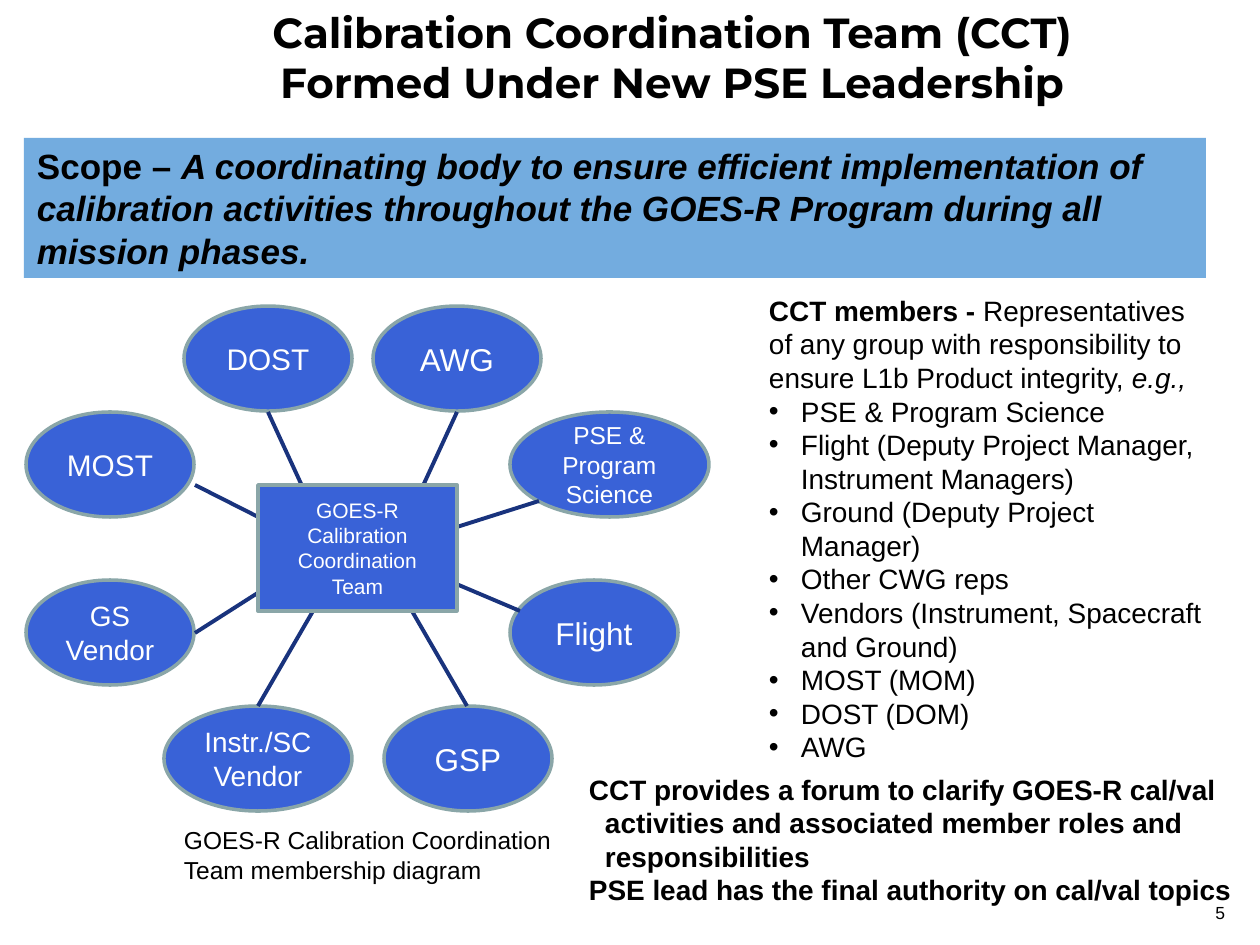
from dataclasses import dataclass

from lxml import etree
from pptx import Presentation
from pptx.dml.color import RGBColor
from pptx.enum.shapes import MSO_CONNECTOR as Connector, MSO_SHAPE as Shape
from pptx.enum.text import MSO_ANCHOR as Anchor, MSO_AUTO_SIZE as AutoSize, PP_ALIGN as Align
from pptx.oxml.ns import qn
from pptx.util import Emu, Pt

EMU_PER_PX = 914400 / 126


@dataclass(frozen=True)
class Theme:
    heading_font: str = "Montserrat"
    body_font: str = "Arial"
    ink: str = "000000"
    light: str = "FFFFFF"
    node: str = "3962D7"
    node_border: str = "8AA6A8"
    link: str = "19337D"
    band: str = "73ACDF"
    title: int = 24
    scope: int = 20
    large: int = 18
    medium: int = 17
    body: int = 16
    small: int = 14
    hub: int = 12
    page: int = 10


THEME = Theme()

# label, left, top, width, type size, link start, link end; relative to the diagram
NODE_HEIGHT = 105
MEMBERS = [
    ("AWG", 347, 0, 168, THEME.large, (431, 106), (378, 221)),
    ("PSE & Program Science", 484, 106, 199, THEME.small, (431, 221), (513, 195)),
    ("Flight", 484, 274, 168, THEME.large, (421, 274), (494, 305)),
    ("GSP", 358, 400, 168, THEME.large, (368, 274), (441, 400)),
    ("Instr./SC Vendor", 138, 400, 188, THEME.body, (305, 274), (232, 400)),
    ("GS Vendor", 0, 274, 168, THEME.body, (169, 327), (252, 274)),
    ("MOST", 0, 106, 168, THEME.medium, (169, 179), (252, 221)),
    ("DOST", 158, 0, 168, THEME.medium, (242, 106), (295, 221)),
]
REPRESENTATIVES = [
    "PSE & Program Science",
    "Flight (Deputy Project Manager, Instrument Managers)",
    "Ground (Deputy Project Manager)",
    "Other CWG reps",
    "Vendors (Instrument, Spacecraft and Ground)",
    "MOST (MOM)",
    "DOST (DOM)",
    "AWG",
]


def px(*lengths):
    return [Emu(round(length * EMU_PER_PX)) for length in lengths]


def place(shape, box):
    shape.left, shape.top, shape.width, shape.height = px(*box)


def set_up_frame(shape, anchor=Anchor.TOP, side=13):
    frame = shape.text_frame
    frame.word_wrap = True
    frame.auto_size = AutoSize.NONE
    frame.vertical_anchor = anchor
    frame.margin_left, frame.margin_right = px(side, side)
    return frame


def add_run(paragraph, text, size, color=THEME.ink, font=THEME.body_font, bold=False, italic=False):
    run = paragraph.add_run()
    run.text = text
    run.font.name, run.font.size = font, Pt(size)
    run.font.bold, run.font.italic = bold, italic
    run.font.color.rgb = RGBColor.from_string(color)


def set_indent(paragraph, hanging, bullet=None):
    """Hang the first line by some px, with the bullet or none at all."""
    properties = paragraph._p.get_or_add_pPr()
    distance = px(hanging)[0]
    properties.set("marL", str(distance))
    properties.set("indent", str(-distance))
    if bullet:
        etree.SubElement(properties, qn("a:buFont")).set("typeface", THEME.body_font)
        etree.SubElement(properties, qn("a:buChar")).set("char", bullet)
    else:
        etree.SubElement(properties, qn("a:buNone"))
    paragraph.space_before = Pt(0)


def add_box(shapes, preset, box, fill, border=None):
    shape = shapes.add_shape(preset, *px(*box))
    shape.shadow.inherit = False
    shape.fill.solid()
    shape.fill.fore_color.rgb = RGBColor.from_string(fill)
    if border:
        shape.line.color.rgb = RGBColor.from_string(border)
        shape.line.width = Pt(2)
    else:
        shape.line.fill.background()
    return shape


def add_node(shapes, preset, box, label, size, side):
    shape = add_box(shapes, preset, box, THEME.node, THEME.node_border)
    paragraph = set_up_frame(shape, Anchor.MIDDLE, side).paragraphs[0]
    paragraph.alignment = Align.CENTER
    add_run(paragraph, label, size, THEME.light)


def add_link(shapes, start, end):
    link = shapes.add_connector(Connector.STRAIGHT, *px(*start, *end))
    link.line.color.rgb = RGBColor.from_string(THEME.link)
    link.line.width = Pt(2.25)
    etree.SubElement(link._element.spPr, qn("a:effectLst"))


def add_text(slide, box, text, size, align=Align.LEFT):
    paragraph = set_up_frame(slide.shapes.add_textbox(*px(*box))).paragraphs[0]
    paragraph.alignment = align
    add_run(paragraph, text, size)


def fill_title(slide, box):
    title = slide.shapes.title
    place(title, box)
    paragraph = set_up_frame(title).paragraphs[0]
    paragraph.alignment = Align.CENTER
    add_run(paragraph, "Calibration Coordination Team (CCT) Formed Under New PSE Leadership",
            THEME.title, font=THEME.heading_font, bold=True)


def add_scope(slide, box):
    band = add_box(slide.shapes, Shape.RECTANGLE, box, THEME.band)
    paragraph = set_up_frame(band, Anchor.MIDDLE).paragraphs[0]
    paragraph.alignment = Align.LEFT
    add_run(paragraph, "Scope – ", THEME.scope, bold=True)
    add_run(paragraph, "A coordinating body to ensure efficient implementation of calibration "
            "activities throughout the GOES-R Program during all mission phases.",
            THEME.scope, bold=True, italic=True)


def add_diagram(slide, left, top):
    """Ring of member ellipses linked to the team in the middle."""
    shapes = slide.shapes.add_group_shape().shapes

    def shift(x, y):
        return left + x, top + y

    for label, x, y, width, size, _, _ in MEMBERS:
        add_node(shapes, Shape.OVAL, (*shift(x, y), width, NODE_HEIGHT), label, size, side=6)
    for *_, start, end in MEMBERS:
        add_link(shapes, shift(*start), shift(*end))
    add_node(shapes, Shape.RECTANGLE, (*shift(232, 179), 199, 126),
             "GOES-R Calibration Coordination Team", THEME.hub, side=18)


def fill_members(slide, box):
    body = slide.placeholders[1]
    place(body, box)
    frame = set_up_frame(body)
    intro = frame.paragraphs[0]
    set_indent(intro, 0)
    add_run(intro, "CCT members - ", THEME.body, bold=True)
    add_run(intro, "Representatives of any group with responsibility to ensure "
            "L1b Product integrity, ", THEME.body)
    add_run(intro, "e.g.,", THEME.body, italic=True)
    for text in REPRESENTATIVES:
        paragraph = frame.add_paragraph()
        set_indent(paragraph, 32, "•")
        add_run(paragraph, text, THEME.body)


def add_conclusions(slide, box):
    frame = set_up_frame(slide.shapes.add_textbox(*px(*box)))
    first, second = frame.paragraphs[0], frame.add_paragraph()
    for paragraph, text in (
        (first, "CCT provides a forum to clarify GOES-R cal/val activities and "
                "associated member roles and responsibilities"),
        (second, "PSE lead has the final authority on cal/val topics"),
    ):
        set_indent(paragraph, 16)
        add_run(paragraph, text, THEME.body, bold=True)


def main():
    presentation = Presentation()
    presentation.slide_width, presentation.slide_height = px(1260, 945)
    slide = presentation.slides.add_slide(presentation.slide_layouts[1])
    fill_title(slide, (210, 0, 924, 115))
    add_diagram(slide, 26, 306)
    add_scope(slide, (24, 138, 1182, 140))
    add_text(slide, (171, 819, 418, 72),
             "GOES-R Calibration Coordination Team membership diagram", THEME.small)
    fill_members(slide, (756, 287, 462, 487))
    add_conclusions(slide, (576, 766, 688, 148))
    add_text(slide, (944, 896, 294, 49), "5", THEME.page, Align.RIGHT)
    presentation.save("out.pptx")


if __name__ == "__main__":
    main()
